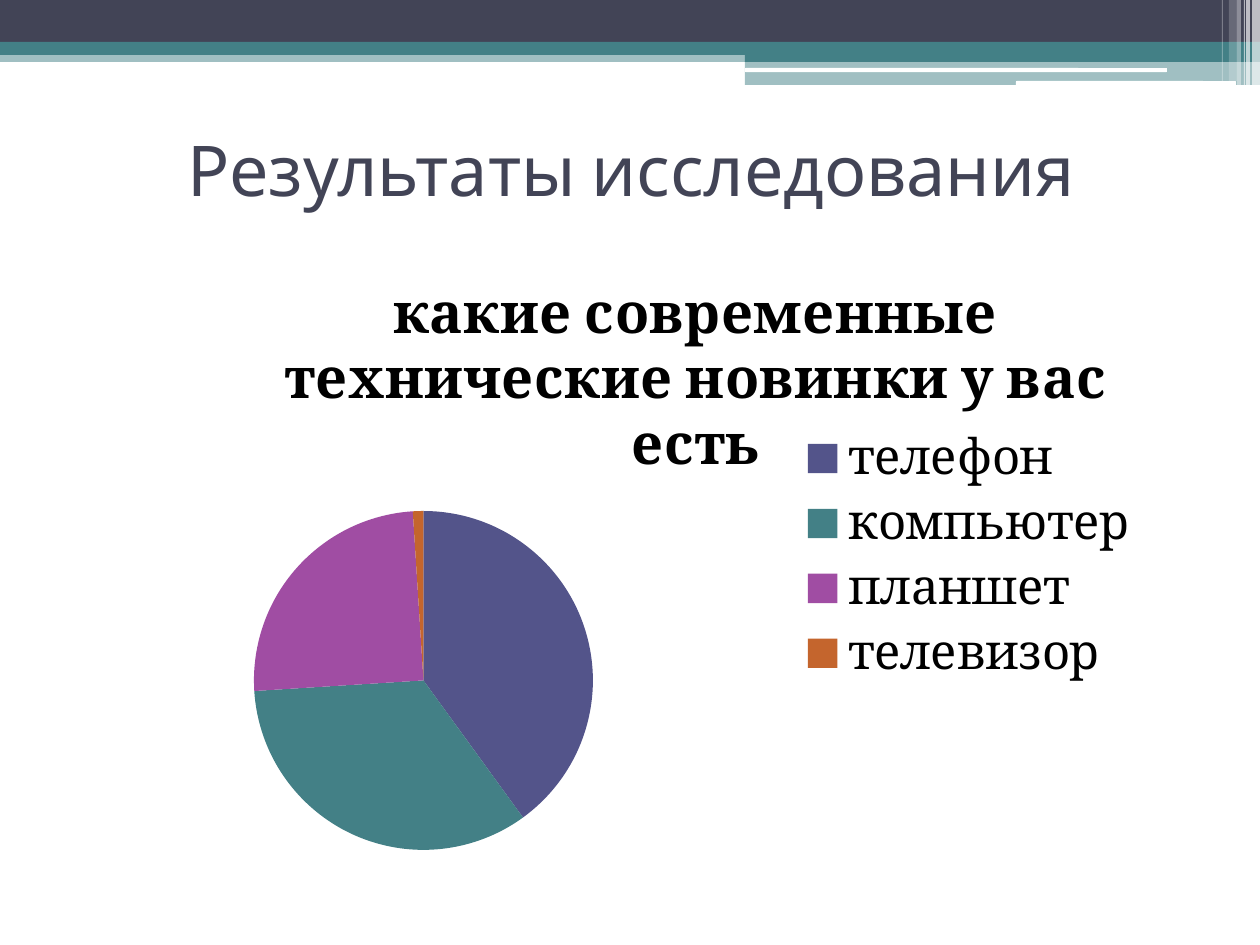
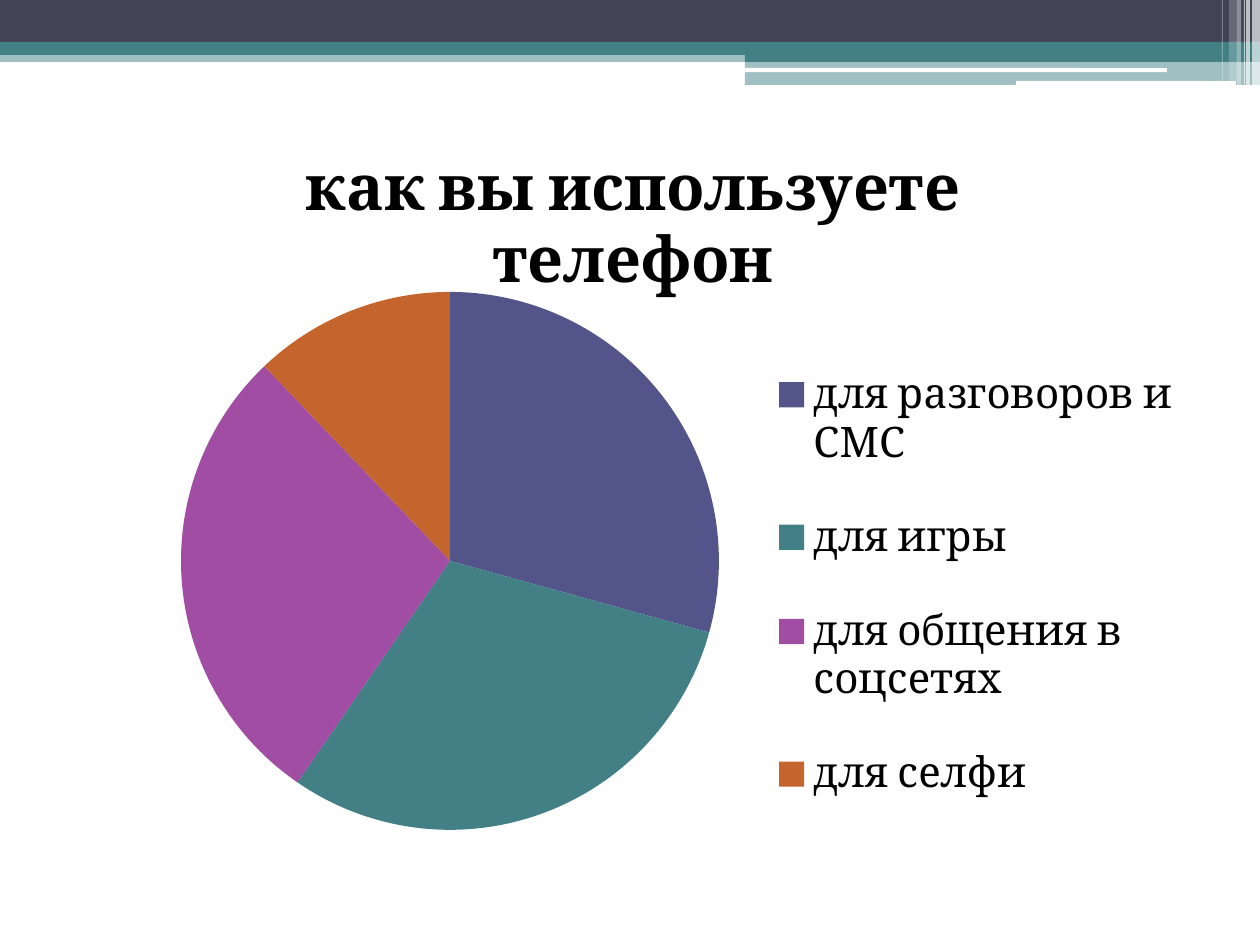
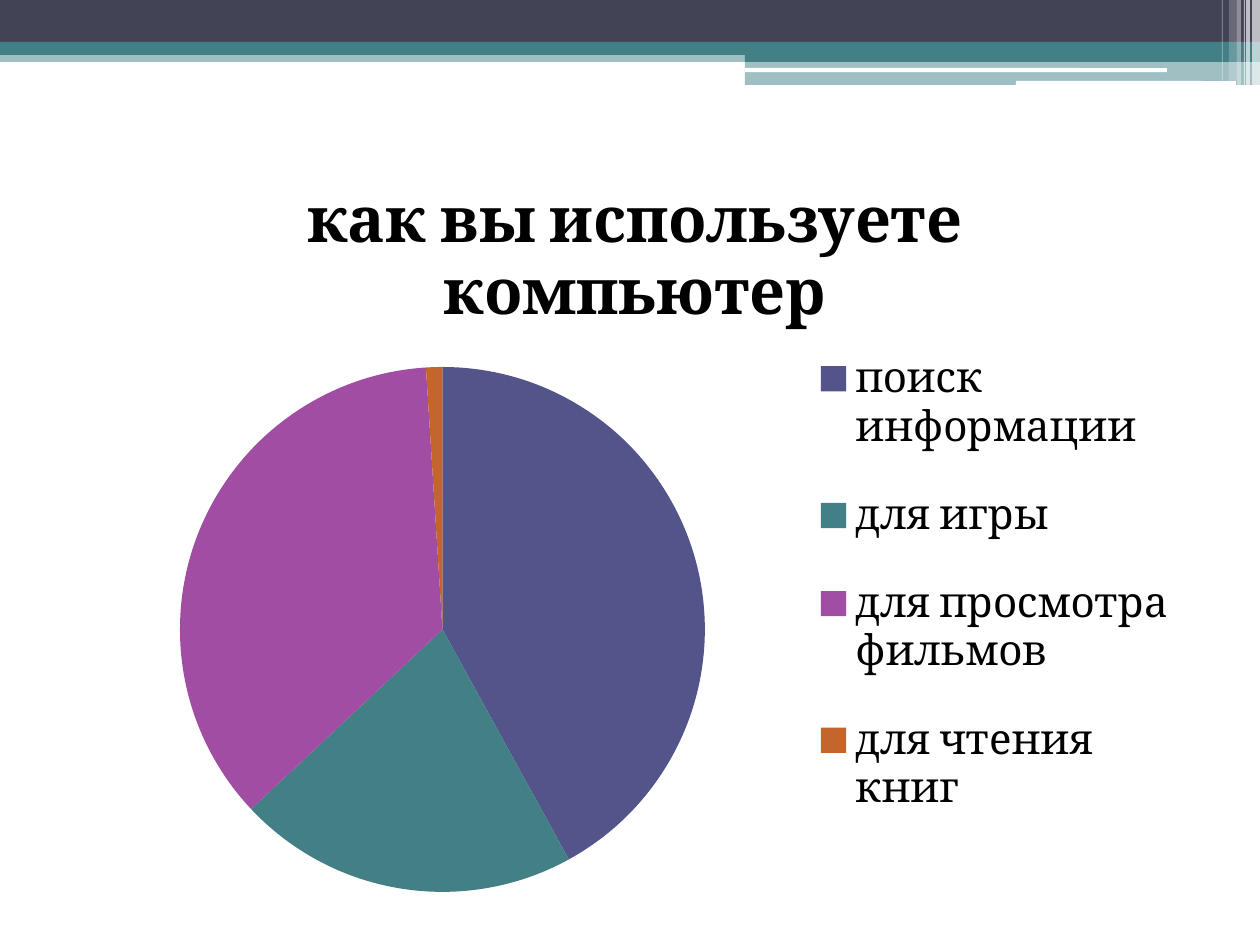
from lxml import etree
from pptx import Presentation
from pptx import util as u
from pptx.chart.data import CategoryChartData
from pptx.dml.color import RGBColor
from pptx.enum import chart as charts, shapes, text
from pptx.oxml import ns

PX = 914400 / 126
COLORS = {"dark": "424456", "teal": "438086", "white": "FFFFFF", "black": "000000"}
SLICES = ["53548A", "438086", "A04DA3", "C4652D"]
RECT = shapes.MSO_SHAPE.RECTANGLE
ROUNDED = shapes.MSO_SHAPE.ROUNDED_RECTANGLE

# preset, box in px, colour, opacity in percent
BANDS = [
    (RECT, (0, 50, 1260, 12), "teal", 50),
    (RECT, (0, 0, 1260, 43), "dark", 100),
    (RECT, (0, 42, 1260, 13), "teal", 100),
    (RECT, (745, 49, 515, 13), "teal", 100),
    (RECT, (745, 61, 515, 24), "teal", 50),
    (ROUNDED, (745, 68, 422, 4), "white", 100),
    (ROUNDED, (1016, 81, 220, 5), "white", 100),
]
# left, width, height, opacity of the stripes in the top right corner
STRIPES = [(1252, 8, 86, 65), (1246, 4, 86, 65), (1244, 1, 86, 60),
           (1237, 4, 86, 40), (1229, 8, 81, 20), (1222, 1, 81, 30)]
BANDS += [(RECT, (left, 0, width, height), "white", opacity)
          for left, width, height, opacity in STRIPES]

SLIDES = [
    {"heading": "Результаты исследования",
     "question": "какие современные технические новинки у вас есть",
     "answers": {"телефон": 40, "компьютер": 34, "планшет": 25, "телевизор": 1},
     "chart": (54, 244, 1103, 624), "pie": (254, 511, 339, 339),
     "title_at": (274, 265), "title_size": 32, "legend_size": 28},
    {"question": "как вы используете телефон",
     "answers": {"для разговоров и СМС": 29, "для игры": 30,
                 "для общения в соцсетях": 28, "для селфи": 12},
     "chart": (35, 135, 1170, 753), "pie": (181, 292, 538, 538),
     "title_at": (294, 135), "title_size": 36,
     "legend": (766, 325, 419, 519), "legend_size": 24},
    {"question": "как вы используете компьютер",
     "answers": {"поиск информации": 42, "для игры": 21,
                 "для просмотра фильмов": 36, "для чтения книг": 1},
     "chart": (35, 145, 1201, 763), "pie": (180, 367, 525, 525),
     "title_at": (296, 167), "title_size": 36,
     "legend": (809, 315, 371, 538), "legend_size": 24},
]


def style_font(font, name, size, color):
    font.name = name
    font.size = u.Pt(size)
    font.color.rgb = RGBColor.from_string(COLORS[color])


def set_layout(parent, index, chart_box, part_box, target=None):
    """Place a chart part by hand; both boxes are in slide px."""
    for old in parent.findall(ns.qn("c:layout")):
        parent.remove(old)
    layout = etree.Element(ns.qn("c:layout"))
    parent.insert(index, layout)
    manual = etree.SubElement(layout, ns.qn("c:manualLayout"))
    left, top, width, height = chart_box
    fractions = [(part_box[0] - left) / width, (part_box[1] - top) / height]
    if len(part_box) == 4:
        fractions += [part_box[2] / width, part_box[3] / height]
    settings = [("layoutTarget", target)] if target else []
    settings += [("xMode", "edge"), ("yMode", "edge")]
    settings += [(name, f"{value:.4f}") for name, value in zip("xywh", fractions)]
    for name, value in settings:
        etree.SubElement(manual, ns.qn(f"c:{name}")).set("val", value)


presentation = Presentation()
presentation.slide_width = u.Emu(round(1260 * PX))
presentation.slide_height = u.Emu(round(945 * PX))

for content in SLIDES:
    slide = presentation.slides.add_slide(presentation.slide_layouts[6])

    for preset, box, color, opacity in BANDS:
        band = slide.shapes.add_shape(preset, *[round(n * PX) for n in box])
        band.shadow.inherit = False
        band.line.fill.background()
        band.fill.solid()
        band.fill.fore_color.rgb = RGBColor.from_string(COLORS[color])
        if opacity < 100:
            rgb = band.fill._xPr.find(".//" + ns.qn("a:srgbClr"))
            etree.SubElement(rgb, ns.qn("a:alpha")).set("val", str(opacity * 1000))

    if "heading" in content:
        box = [round(n * PX) for n in (64, 95, 1134, 147)]
        frame = slide.shapes.add_textbox(*box).text_frame
        frame.word_wrap = True
        frame.vertical_anchor = text.MSO_ANCHOR.MIDDLE
        paragraph = frame.paragraphs[0]
        paragraph.alignment = text.PP_ALIGN.CENTER
        run = paragraph.add_run()
        run.text = content["heading"]
        style_font(run.font, "Cabin", 40, "dark")

    data = CategoryChartData()
    data.categories = list(content["answers"])
    data.add_series(content["question"], content["answers"].values())
    box = [round(n * PX) for n in content["chart"]]
    chart = slide.shapes.add_chart(charts.XL_CHART_TYPE.PIE, *box, data).chart
    style_font(chart.font, "Cambria", 10, "black")

    chart.has_title = True
    run = chart.chart_title.text_frame.paragraphs[0].add_run()
    run.text = content["question"]
    style_font(run.font, "Cambria", content["title_size"], "black")
    run.font.bold = True

    chart.has_legend = True
    chart.legend.position = charts.XL_LEGEND_POSITION.RIGHT
    chart.legend.include_in_layout = False
    style_font(chart.legend.font, "Cambria", content["legend_size"], "black")

    plot = chart.plots[0]
    plot.vary_by_categories = True
    for index, color in enumerate(SLICES):
        fill = plot.series[0].points[index].format.fill
        fill.solid()
        fill.fore_color.rgb = RGBColor.from_string(color)

    title, plot_area, legend = [chart._chartSpace.find(".//" + ns.qn(f"c:{name}"))
                                for name in ("title", "plotArea", "legend")]
    set_layout(title, 1, content["chart"], content["title_at"])
    set_layout(plot_area, 0, content["chart"], content["pie"], "inner")
    if "legend" in content:
        set_layout(legend, 1, content["chart"], content["legend"])

presentation.save("out.pptx")
